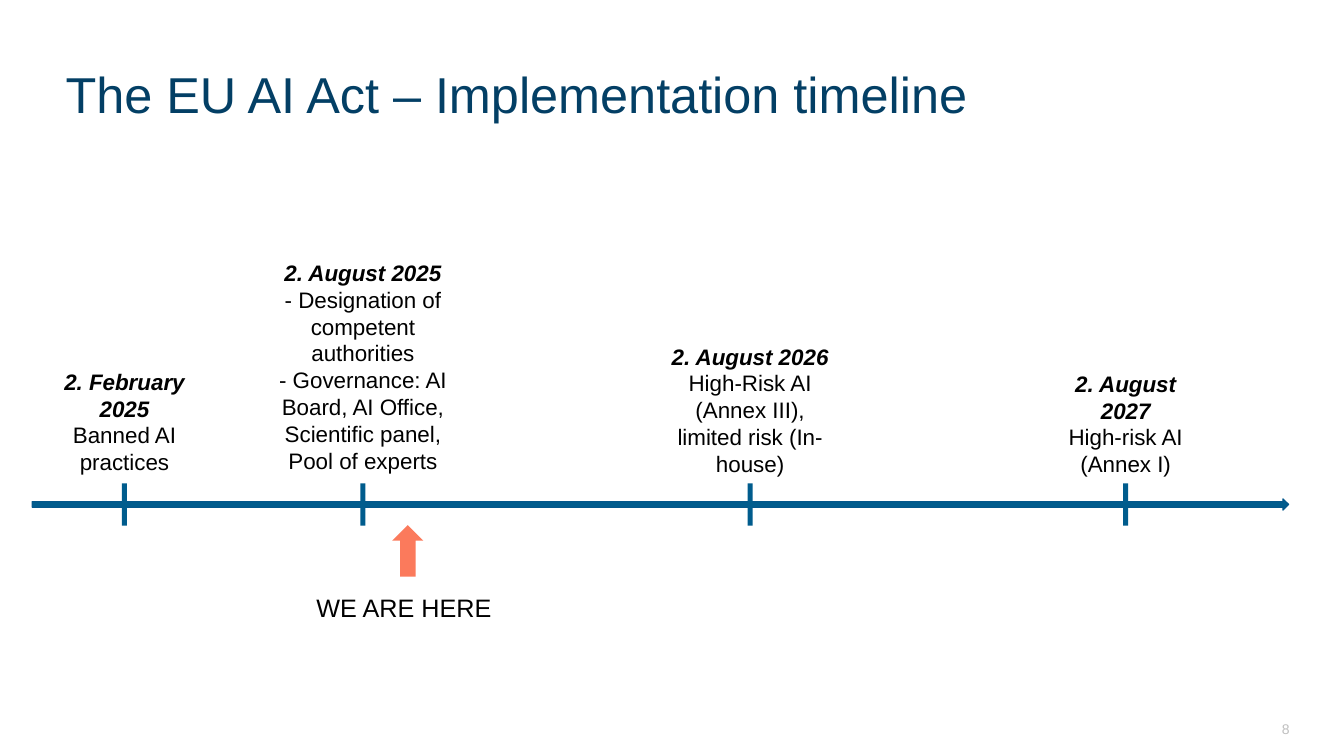
from pptx import Presentation
from pptx.dml.color import RGBColor
from pptx.enum.shapes import MSO_SHAPE
from pptx.enum.text import MSO_ANCHOR, MSO_AUTO_SIZE, PP_ALIGN
from pptx.util import Emu, Pt

EMU_PER_PX = 9144
BLUE = "005C8D"
TICK_WIDTH, TICK_HEIGHT = 5, 42

MILESTONES = [
    ((40, 360, 167, 118), ["2. February 2025", "Banned AI practices"]),
    ((255, 252, 210, 226), [
        "2. August 2025",
        "- Designation of competent authorities",
        "- Governance: AI Board, AI Office, Scientific panel, Pool of experts",
    ]),
    ((647, 335, 194, 145), [
        "2. August 2026", "High-Risk AI", "(Annex III), limited risk (In-house)",
    ]),
    ((1033, 362, 167, 118), ["2. August 2027", "High-risk AI", "(Annex I)"]),
]


def px(length):
    """Turn px into EMU."""
    return Emu(round(length * EMU_PER_PX))


def color(hex_code):
    """Turn a hex string into a colour."""
    return RGBColor.from_string(hex_code)


def style(target, formats):
    """Set each attribute named in formats on target."""
    for attribute, value in formats.items():
        setattr(target, attribute, value)


def write(paragraph, text, size, hex_code, **formats):
    """Fill a paragraph with one formatted run."""
    run = paragraph.add_run()
    run.text = text
    style(run.font, {"name": "Arial", "size": Pt(size), **formats})
    run.font.color.rgb = color(hex_code)


def add_label(slide, box, lines, size, hex_code="000000", align=PP_ALIGN.LEFT,
              bold_first=False, **frame_formats):
    """Place a wrapped text box with one paragraph per line."""
    frame = slide.shapes.add_textbox(*map(px, box)).text_frame
    style(frame, {"word_wrap": True, **frame_formats})
    for index, line in enumerate(lines):
        paragraph = frame.add_paragraph() if index else frame.paragraphs[0]
        paragraph.alignment = align
        heading = bold_first and index == 0
        write(paragraph, line, size, hex_code, bold=heading, italic=heading)


def add_block(slide, kind, box, fill, outline=None):
    """Place a filled preset shape, with an outline if one is given."""
    block = slide.shapes.add_shape(kind, *map(px, box))
    block.shadow.inherit = False
    block.fill.solid()
    block.fill.fore_color.rgb = color(fill)
    if outline:
        block.line.color.rgb = color(outline)
        block.line.width = Pt(1)
    else:
        block.line.fill.background()


def add_title(slide, box):
    """Move and fill the title placeholder."""
    title = slide.shapes.title
    style(title, dict(zip(("left", "top", "width", "height"), map(px, box))))
    style(title.text_frame, {
        "vertical_anchor": MSO_ANCHOR.MIDDLE,
        "word_wrap": True,
        "auto_size": MSO_AUTO_SIZE.NONE,
    })
    paragraph = title.text_frame.paragraphs[0]
    style(paragraph, {"alignment": PP_ALIGN.LEFT, "line_spacing": 0.9})
    write(paragraph, "The EU AI Act – Implementation timeline", 36, "033F65")


def add_timeline(slide, box):
    """Draw the time axis in its box with the milestones above it."""
    left, top, width, height = box
    axis_middle = top + height / 2
    add_block(slide, MSO_SHAPE.RIGHT_ARROW, box, BLUE, "03578B")
    for label_box, lines in MILESTONES:
        center = label_box[0] + label_box[2] / 2
        add_label(slide, label_box, lines, 16, align=PP_ALIGN.CENTER, bold_first=True)
        tick = (center - TICK_WIDTH / 2, axis_middle - TICK_HEIGHT / 2,
                TICK_WIDTH, TICK_HEIGHT)
        add_block(slide, MSO_SHAPE.RECTANGLE, tick, BLUE)


def add_current_position(slide, box):
    """Place the arrow at the top of the box and its caption at the foot."""
    left, top, width, height = box
    add_block(slide, MSO_SHAPE.UP_ARROW, (left + 85, top, 31, 51), "FB7A5C")
    add_label(slide, (left, top + height - 40, width, 40), ["WE ARE HERE"], 18)


def add_page_number(slide, box):
    """Place the page number at the right of its box."""
    add_label(slide, box, ["8"], 10, "BFBFBF", PP_ALIGN.RIGHT,
              margin_right=0, vertical_anchor=MSO_ANCHOR.MIDDLE)


def main():
    """Build the slide and save it."""
    deck = Presentation()
    style(deck, {"slide_width": px(1333), "slide_height": px(750)})
    slide = deck.slides.add_slide(deck.slide_layouts[5])
    add_title(slide, (55, 55, 1223, 83))
    add_timeline(slide, (32, 495, 1246, 11))
    add_current_position(slide, (304, 521, 202, 102))
    add_page_number(slide, (1231, 711, 48, 24))
    deck.save("out.pptx")


if __name__ == "__main__":
    main()
